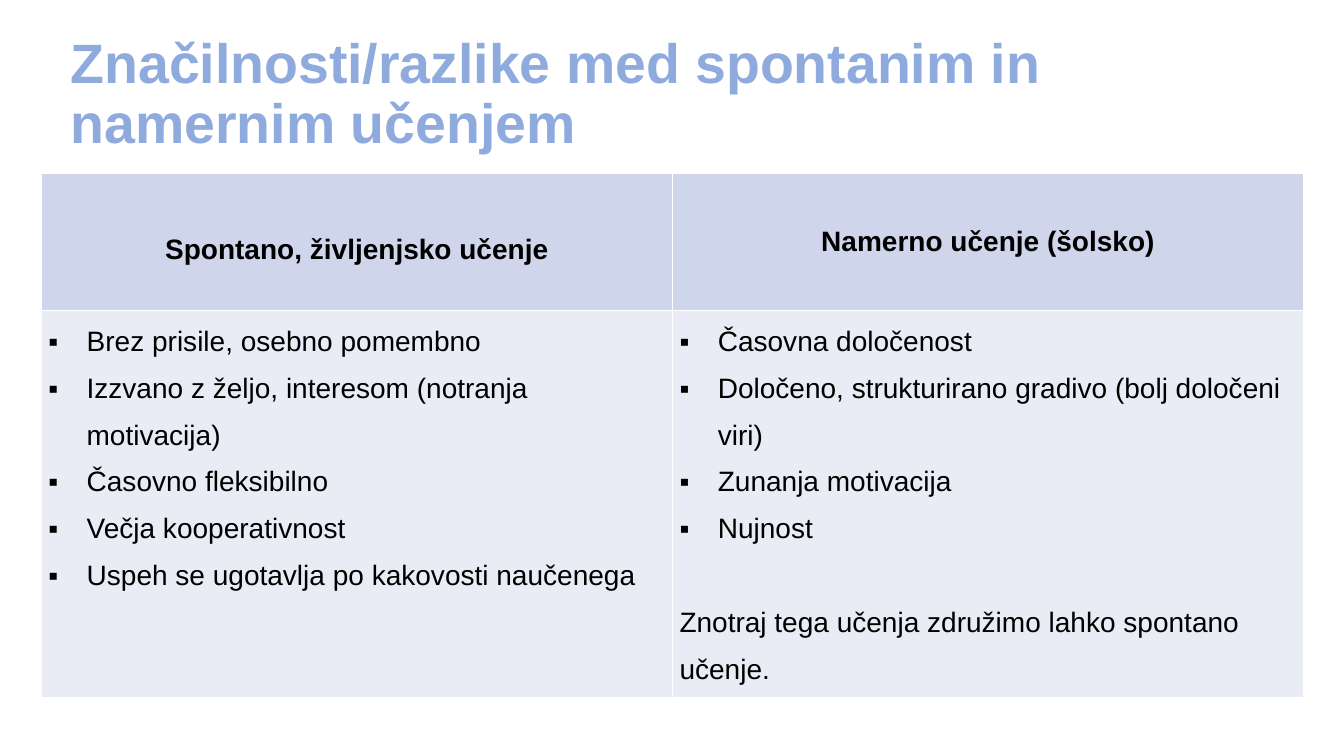
from pptx import Presentation
from pptx import util as u
from pptx.dml.color import RGBColor
from pptx.enum import text as t
from pptx.oxml import ns
from lxml import etree

HUES = {"title": "8FAADC", "head": "CFD5EA", "body": "E9EBF5", "ink": "000000"}
TITLE = "Značilnosti/razlike med spontanim in namernim učenjem"
HEADS = ["Spontano, življenjsko učenje", "Namerno učenje (šolsko)"]
LISTS = [
    [
        "Brez prisile, osebno pomembno",
        "Izzvano z željo, interesom (notranja motivacija)",
        "Časovno fleksibilno",
        "Večja kooperativnost",
        "Uspeh se ugotavlja po kakovosti naučenega",
    ],
    [
        "Časovna določenost",
        "Določeno, strukturirano gradivo (bolj določeni viri)",
        "Zunanja motivacija",
        "Nujnost",
    ],
]
CLOSING = "Znotraj tega učenja združimo lahko spontano učenje."


def add_bullet(para):
    props = para._p.get_or_add_pPr()
    props.set("marL", str(u.Inches(0.38)))
    props.set("indent", str(-u.Inches(0.38)))
    etree.SubElement(props, ns.qn("a:buFont"), typeface="Arial")
    etree.SubElement(props, ns.qn("a:buChar"), char="▪")


def write(frame, words, size=20, hue="ink", bold=False, lines=1.5,
          align=t.PP_ALIGN.LEFT, bullet=False, gap=0):
    para = frame.add_paragraph() if frame.text else frame.paragraphs[0]
    para.alignment = align
    para.line_spacing = lines
    if gap:
        para.space_before = u.Pt(gap)
    if bullet:
        add_bullet(para)
    run = para.add_run()
    run.text = words
    run.font.name = "Arial"
    run.font.size = u.Pt(size)
    run.font.bold = bold
    run.font.color.rgb = RGBColor.from_string(HUES[hue])


def add_title(slide):
    title = slide.shapes.title
    title.left, title.top = u.Inches(0.6), u.Inches(0.35)
    title.width, title.height = u.Inches(11.81), u.Inches(1.74)
    frame = title.text_frame
    frame.word_wrap = True
    frame.auto_size = t.MSO_AUTO_SIZE.NONE
    frame.vertical_anchor = t.MSO_ANCHOR.TOP
    frame.margin_top = 0
    write(frame, TITLE, size=39.6, hue="title", bold=True, lines=0.9)


def style_cell(cell, hue, anchor, bottom=0):
    cell.fill.solid()
    cell.fill.fore_color.rgb = RGBColor.from_string(HUES[hue])
    cell.vertical_anchor = anchor
    cell.margin_left = cell.margin_right = u.Inches(0.07)
    cell.margin_top = 0
    cell.margin_bottom = u.Inches(bottom)
    return cell.text_frame


def add_grid(slide):
    grid = slide.shapes.add_table(
        2, 2, u.Inches(0.41), u.Inches(1.72), u.Inches(12.52), u.Inches(5.2)
    ).table
    grid.first_row = grid.horz_banding = False
    grid.rows[0].height = u.Inches(1.36)
    grid.rows[1].height = u.Inches(3.84)
    for col, (head, items) in enumerate(zip(HEADS, LISTS)):
        frame = style_cell(grid.cell(0, col), "head", t.MSO_ANCHOR.MIDDLE, 0.16 * col)
        write(frame, head, bold=True, align=t.PP_ALIGN.CENTER)
        frame = style_cell(grid.cell(1, col), "body", t.MSO_ANCHOR.TOP)
        for item in items:
            write(frame, item, bullet=True)
    write(frame, CLOSING, gap=33.5)


def main():
    deck = Presentation()
    deck.slide_width, deck.slide_height = u.Inches(13.33), u.Inches(7.5)
    slide = deck.slides.add_slide(deck.slide_layouts[5])
    add_title(slide)
    add_grid(slide)
    deck.save("out.pptx")


if __name__ == "__main__":
    main()
